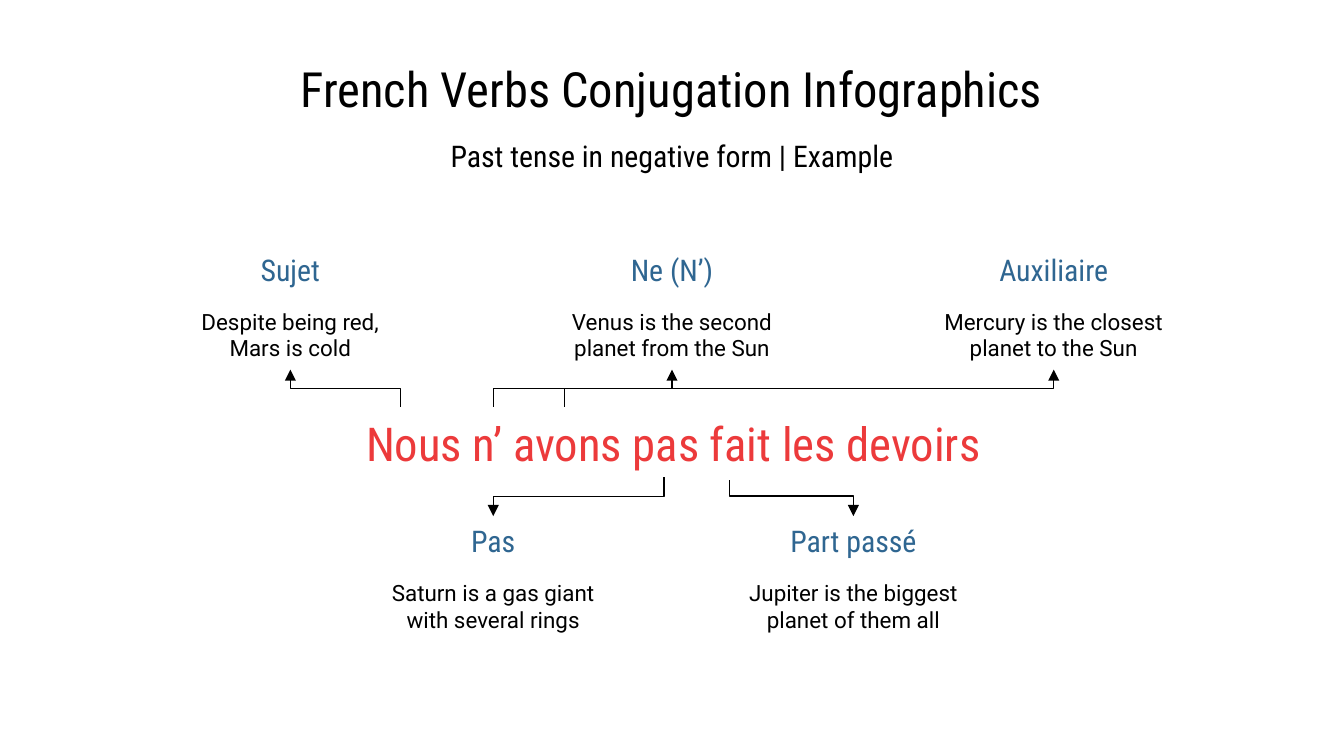
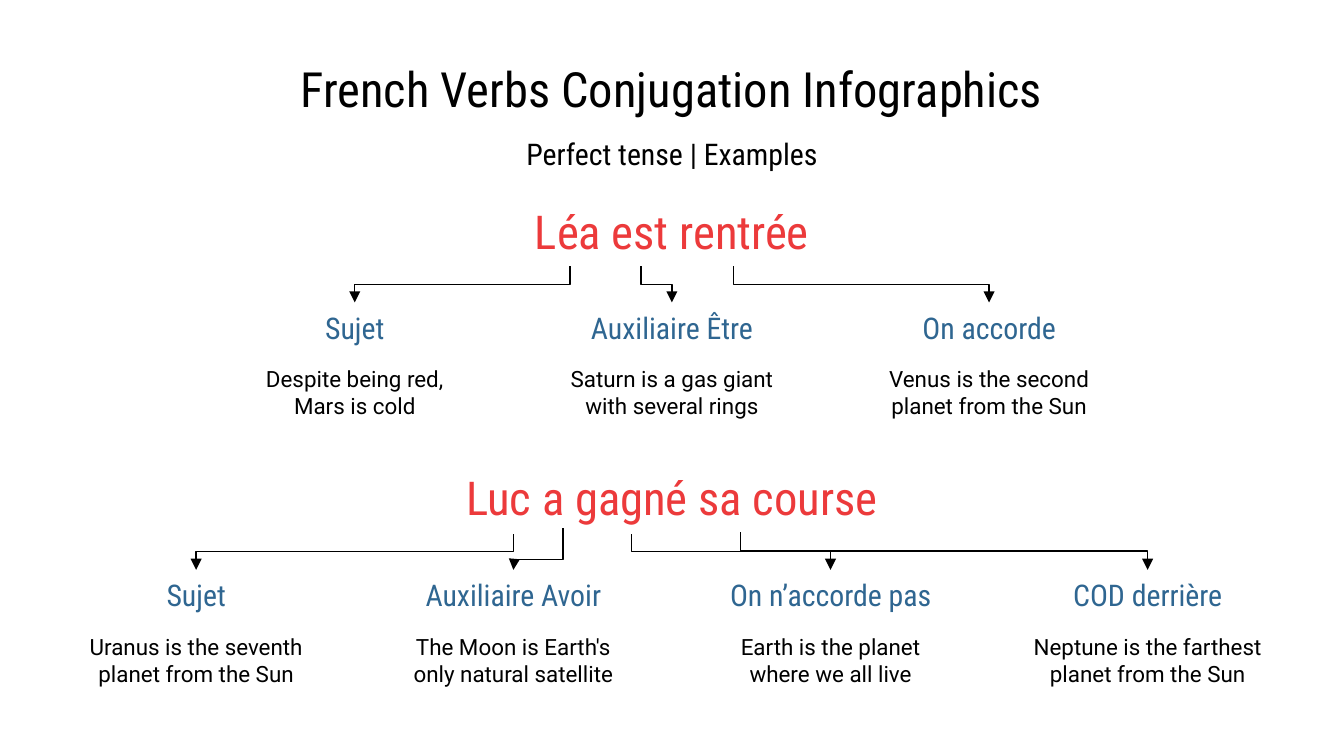
from pptx import Presentation
from pptx import util as u
from pptx.dml.color import RGBColor
from pptx.enum import shapes, text
from pptx.oxml import ns
from lxml import etree

PX = 9144
BLACK, BLUE, RED = "000000", "2F6691", "EC3A3B"
BODY, CONDENSED = "Roboto", "Roboto Condensed"
TOP, MIDDLE, BOTTOM = text.MSO_ANCHOR.TOP, text.MSO_ANCHOR.MIDDLE, text.MSO_ANCHOR.BOTTOM
CARD_WIDTH, HEADING_HEIGHT, BODY_HEIGHT = 192, 37, 56


def color(value):
    return RGBColor.from_string(value)


def px(value):
    return u.Emu(value * PX)


class Infographic:
    def __init__(self):
        self.deck = Presentation()
        self.deck.slide_width = px(1000)
        self.deck.slide_height = px(1000) * 9 // 16
        self.page = None

    def new_page(self, subtitle, subtitle_top):
        self.page = self.deck.slides.add_slide(self.deck.slide_layouts[6])
        self.label("French Verbs Conjugation Infographics", 50, 46, 900, 51, 26, anchor=BOTTOM)
        self.label(subtitle, 226, subtitle_top, 548, 37, 16)

    def label(self, words, left, top, width, height, size, fill=BLACK, font=CONDENSED, anchor=MIDDLE):
        box = self.page.shapes.add_textbox(px(left), px(top), px(width), px(height))
        frame = box.text_frame
        frame.word_wrap = True
        frame.vertical_anchor = anchor
        frame.margin_left = frame.margin_right = px(10)
        frame.margin_top = frame.margin_bottom = px(10)
        para = frame.paragraphs[0]
        para.alignment = text.PP_ALIGN.CENTER
        span = para.add_run()
        span.text = words
        span.font.size = u.Pt(size)
        span.font.name = font
        span.font.color.rgb = color(fill)

    def sentence(self, words, left, top):
        self.label(words, left, top, 526, 29, 25, RED)

    def card(self, heading, body, left, top):
        self.label(heading, left, top, CARD_WIDTH, HEADING_HEIGHT, 16, BLUE)
        self.label(body, left, top + HEADING_HEIGHT, CARD_WIDTH, BODY_HEIGHT, 12, font=BODY, anchor=TOP)

    def card_row(self, first, last, top, cards, above=False):
        step = (last - first) / (len(cards) - 1)
        for index, (heading, body, word, *bend) in enumerate(cards):
            left = round(first + step * index)
            edge = top + HEADING_HEIGHT + BODY_HEIGHT if above else top
            self.card(heading, body, left, top)
            self.elbow((left + CARD_WIDTH // 2, edge), word, *bend)

    def elbow(self, start, end, bend=50000):
        across, down = end[0] - start[0], end[1] - start[1]
        width, height = abs(down), abs(across)
        left = (start[0] + end[0] - width) * PX // 2
        top = (start[1] + end[1] - height) * PX // 2
        line = self.page.shapes.add_connector(
            shapes.MSO_CONNECTOR.ELBOW, left, top, left + width * PX, top + height * PX)
        line.line.color.rgb = color(BLACK)
        line.line.width = u.Pt(0.75)
        properties = line._element.spPr
        frame = properties.find(ns.qn("a:xfrm"))
        frame.set("rot", str((270 if across > 0 else 90) * 60000))
        if (across > 0) == (down > 0):
            frame.set("flipH", "1")
        guides = properties.find(ns.qn("a:prstGeom")).get_or_add_avLst()
        etree.SubElement(guides, ns.qn("a:gd"), name="adj1", fmla=f"val {bend}")
        etree.SubElement(properties.find(ns.qn("a:ln")), ns.qn("a:headEnd"), type="triangle")
        etree.SubElement(properties, ns.qn("a:effectLst"))


def main():
    show = Infographic()

    show.new_page("Past tense in negative form | Example", 97)
    show.sentence("Nous n’ avons pas fait les devoirs", 238, 315)
    show.card_row(120, 688, 182, [
        ("Sujet", "Despite being red, Mars is cold", (298, 303)),
        ("Ne (N’)", "Venus is the second planet from the Sun", (367, 303)),
        ("Auxiliaire", "Mercury is the closest planet to the Sun", (420, 303)),
    ], above=True)
    show.card_row(271, 539, 384, [
        ("Pas", "Saturn is a gas giant with several rings", (494, 355)),
        ("Part passé", "Jupiter is the biggest planet of them all", (543, 357), 55600),
    ])

    show.new_page("Perfect tense | Examples", 96)
    show.sentence("Léa est rentrée", 237, 157)
    show.card_row(168, 640, 225, [
        ("Sujet", "Despite being red, Mars is cold", (424, 198)),
        ("Auxiliaire Être", "Saturn is a gas giant with several rings", (477, 198)),
        ("On accorde", "Venus is the second planet from the Sun", (546, 198)),
    ])
    show.sentence("Luc a gagné sa course", 237, 355)
    show.card_row(50, 758, 424, [
        ("Sujet", "Uranus is the seventh planet from the Sun", (382, 397)),
        ("Auxiliaire Avoir", "The Moon is Earth's only natural satellite", (419, 393), 24600),
        ("On n’accorde pas", "Earth is the planet where we all live", (470, 397)),
        ("COD derrière", "Neptune is the farthest planet from the Sun", (551, 396)),
    ])

    show.deck.save("out.pptx")


if __name__ == "__main__":
    main()
